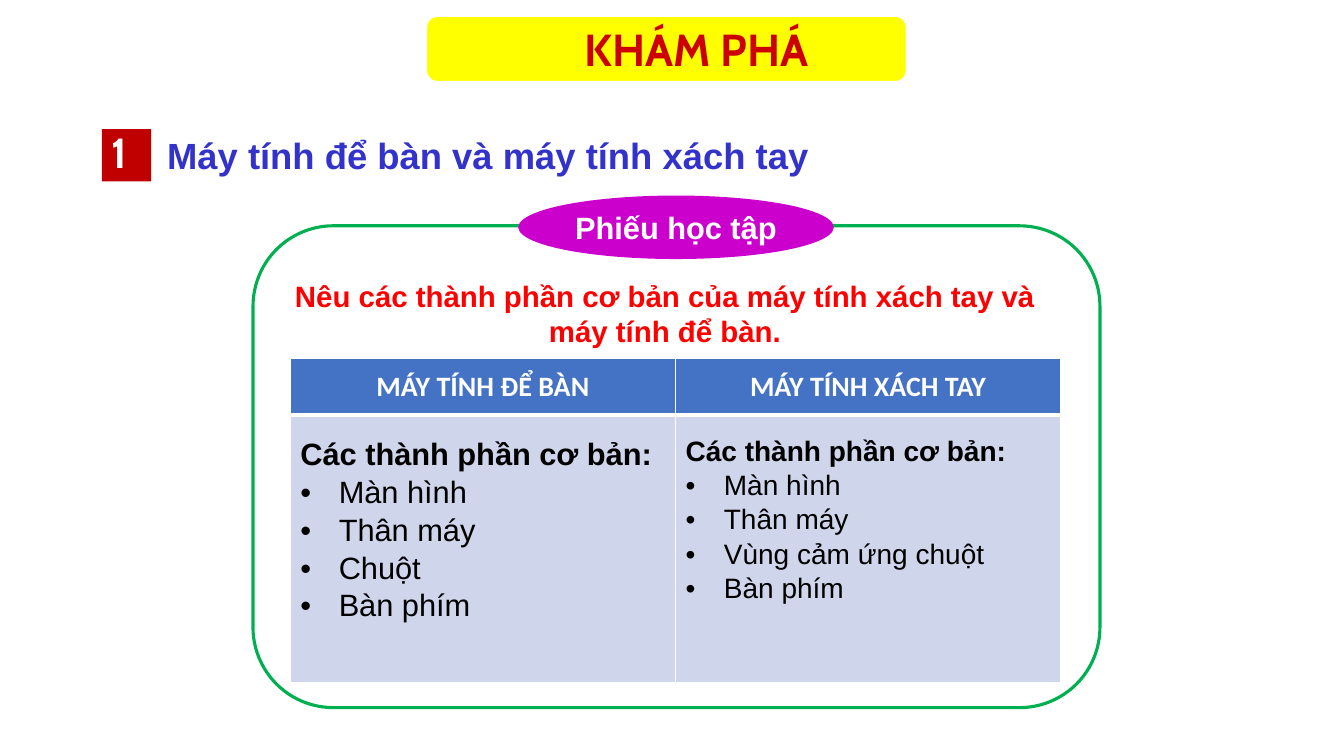
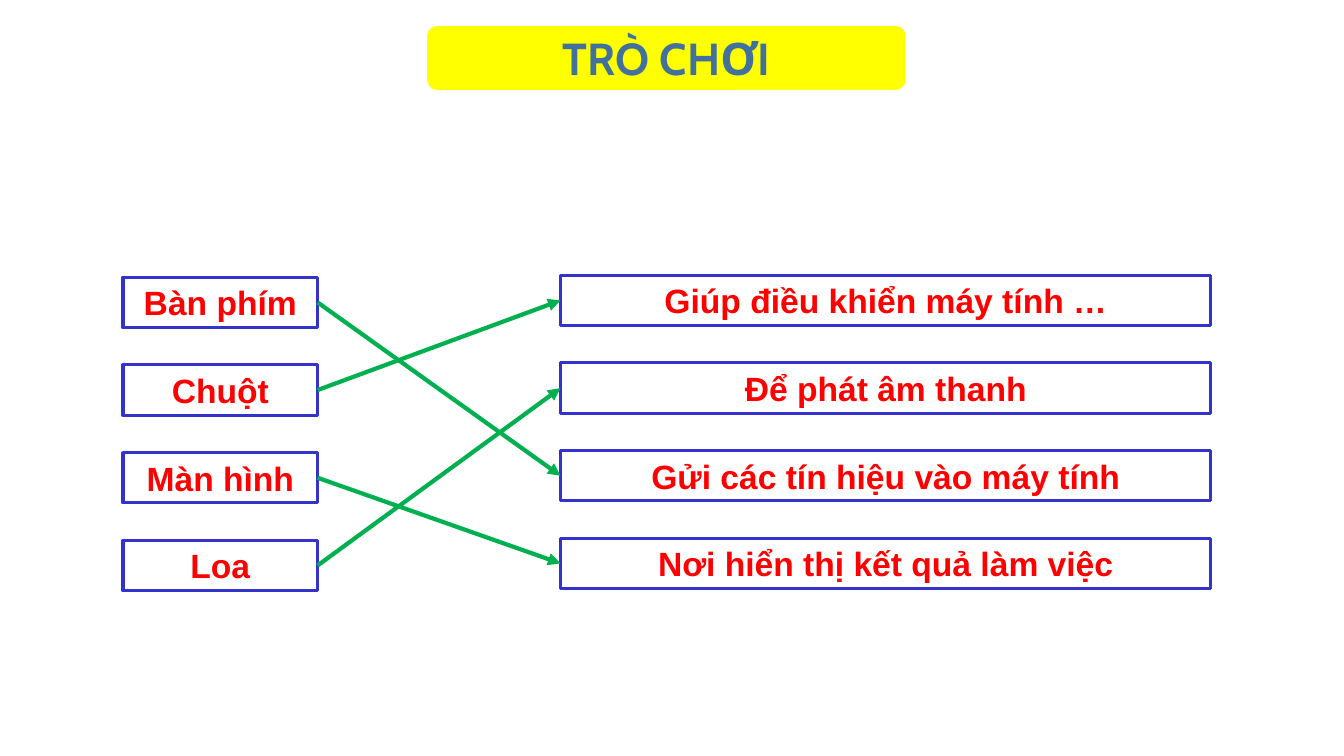
from lxml import etree
from pptx import Presentation
from pptx import util as u
from pptx.dml.color import RGBColor
from pptx.enum import shapes, text
from pptx.oxml.ns import qn

PX = 9144  # 100 px to the inch


class Theme:
    white, black, yellow = "FFFFFF", "000000", "FFFF00"
    steel, crimson, maroon = "41719C", "CC0000", "C00000"
    indigo, green, purple, red = "3333CC", "00B050", "CC00CC", "FF0000"
    head, body = "4472C4", "CFD5EA"
    sans, show, plain = "Arial", "Cabin", "Calibri"
    banner, number, topic, match = 32, 30, 26, 24
    badge, task, label = 22, 21, 20


T = Theme
SHAPE = shapes.MSO_SHAPE
MID, TOP = text.MSO_ANCHOR.MIDDLE, text.MSO_ANCHOR.TOP
LEFT, CENTER = text.PP_ALIGN.LEFT, text.PP_ALIGN.CENTER

# Content
TOPIC = ("1", "Máy tính để bàn và máy tính xách tay")
BADGE = "Phiếu học tập"
TASK = "Nêu các thành phần cơ bản của máy tính xách tay và máy tính để bàn."
INTRO = "Các thành phần cơ bản:"
KINDS = [  # heading, text size, parts
    ("MÁY TÍNH ĐỂ BÀN", 22, ["Màn hình", "Thân máy", "Chuột", "Bàn phím"]),
    ("MÁY TÍNH XÁCH TAY", 20,
     ["Màn hình", "Thân máy", "Vùng cảm ứng chuột", "Bàn phím"]),
]
GAME = "TRÒ CHƠI"
PARTS = ["Bàn phím", "Chuột", "Màn hình", "Loa"]
USES = ["Giúp điều khiển máy tính …", "Để phát âm thanh",
        "Gửi các tín hiệu vào máy tính", "Nơi hiển thị kết quả làm việc"]
PAIRS = [(0, 2), (1, 0), (2, 3), (3, 1)]  # part, use
STEP = 87


# Helpers
def px(*sides):
    return [n * PX for n in sides]


def rgb(code):
    return RGBColor.from_string(code)


def write(para, words, size, color, font=T.sans, bold=True, align=LEFT):
    para.alignment = align
    run = para.add_run()
    run.text = words
    run.font.size, run.font.name, run.font.bold = u.Pt(size), font, bold
    run.font.color.rgb = rgb(color)


def shape(slide, kind, box, fill, line=None, width=1, anchor=MID):
    item = slide.shapes.add_shape(kind, *px(*box))
    item.shadow.inherit = False
    item.fill.solid()
    item.fill.fore_color.rgb = rgb(fill)
    if line:
        item.line.color.rgb = rgb(line)
        item.line.width = u.Pt(width)
    else:
        item.line.fill.background()
    item.text_frame.word_wrap = True
    item.text_frame.vertical_anchor = anchor
    return item


def label(slide, box, words, size, color, font=T.sans, align=LEFT):
    frame = slide.shapes.add_textbox(*px(*box)).text_frame
    frame.word_wrap = True
    write(frame.paragraphs[0], words, size, color, font, align=align)


def banner(slide, top, words, color, inset=10):
    item = shape(slide, SHAPE.ROUNDED_RECTANGLE, (423, top, 476, 65),
                 T.yellow, T.white)
    item.text_frame.margin_left = inset * PX
    write(item.text_frame.paragraphs[0], words, T.banner, color, T.show,
          align=CENTER)


def bullet(para):
    props = para._p.get_or_add_pPr()
    props.set("marL", str(38 * PX))
    props.set("indent", str(-38 * PX))
    etree.SubElement(props, qn("a:buFont"), typeface="Arial")
    etree.SubElement(props, qn("a:buChar"), char="•")


def paint(cell, fill, base=1):
    props = cell._tc.get_or_add_tcPr()
    for side, width in zip("LRTB", (1, 1, 1, base)):
        edge = etree.SubElement(props, qn("a:ln" + side),
                                w=str(u.Pt(width)))
        solid = etree.SubElement(edge, qn("a:solidFill"))
        etree.SubElement(solid, qn("a:srgbClr"), val=T.white)
    cell.fill.solid()
    cell.fill.fore_color.rgb = rgb(fill)


def table(slide):
    grid = slide.shapes.add_table(2, len(KINDS), *px(288, 356, 764, 321)).table
    for row, high in zip(grid.rows, (56, 265)):
        row.height = high * PX
    for col, (name, size, parts) in enumerate(KINDS):
        grid.columns[col].width = 382 * PX
        head, body = grid.cell(0, col), grid.cell(1, col)
        paint(head, T.head, 3)
        head.vertical_anchor = MID
        write(head.text_frame.paragraphs[0], name, T.label, T.white, T.plain,
              align=CENTER)
        paint(body, T.body)
        first = body.text_frame.paragraphs[0]
        first.line_spacing = 1.5
        write(first, INTRO, size, T.black)
        for part in parts:
            para = body.text_frame.add_paragraph()
            bullet(para)
            para.line_spacing = 1.1
            write(para, part, size, T.black, bold=False)


def column(slide, left, top, width, names):
    boxes = []
    for row, name in enumerate(names):
        box = shape(slide, SHAPE.RECTANGLE,
                    (left, top + row * STEP, width, 50),
                    T.white, T.indigo, 2.25, TOP)
        write(box.text_frame.paragraphs[0], name, T.match, T.red,
              align=CENTER)
        boxes.append(box)
    return boxes


def arrow(slide, start, end):
    line = slide.shapes.add_connector(shapes.MSO_CONNECTOR.STRAIGHT, 0, 0, 0, 0)
    line.begin_connect(start, 3)
    line.end_connect(end, 1)
    line.line.color.rgb = rgb(T.green)
    line.line.width = u.Pt(3)
    etree.SubElement(line.line._get_or_add_ln(), qn("a:tailEnd"),
                     type="triangle")
    etree.SubElement(line._element.spPr, qn("a:effectLst"))


# Slides
def explore(slide):
    banner(slide, 16, "KHÁM PHÁ", T.crimson, inset=70)
    shape(slide, SHAPE.RECTANGLE, (101, 128, 49, 52), T.maroon)
    label(slide, (101, 121, 47, 61), TOPIC[0], T.number, T.white, T.show)
    label(slide, (156, 127, 720, 54), TOPIC[1], T.topic, T.indigo)
    shape(slide, SHAPE.ROUNDED_RECTANGLE, (251, 224, 840, 478),
          T.white, T.green, 2.25)
    badge = shape(slide, SHAPE.OVAL, (514, 194, 313, 63), T.purple)
    write(badge.text_frame.paragraphs[0], BADGE, T.badge, T.white,
          align=CENTER)
    label(slide, (274, 271, 771, 81), TASK, T.task, T.red, align=CENTER)
    table(slide)


def game(slide):
    banner(slide, 25, GAME, T.steel)
    parts = column(slide, 122, 275, 193, PARTS)
    uses = column(slide, 556, 273, 645, USES)
    for part, use in PAIRS:
        arrow(slide, parts[part], uses[use])


def main():
    deck = Presentation()
    deck.slide_width, deck.slide_height = px(1333, 750)
    for build in (explore, game):
        build(deck.slides.add_slide(deck.slide_layouts[6]))
    deck.save("out.pptx")


if __name__ == "__main__":
    main()
